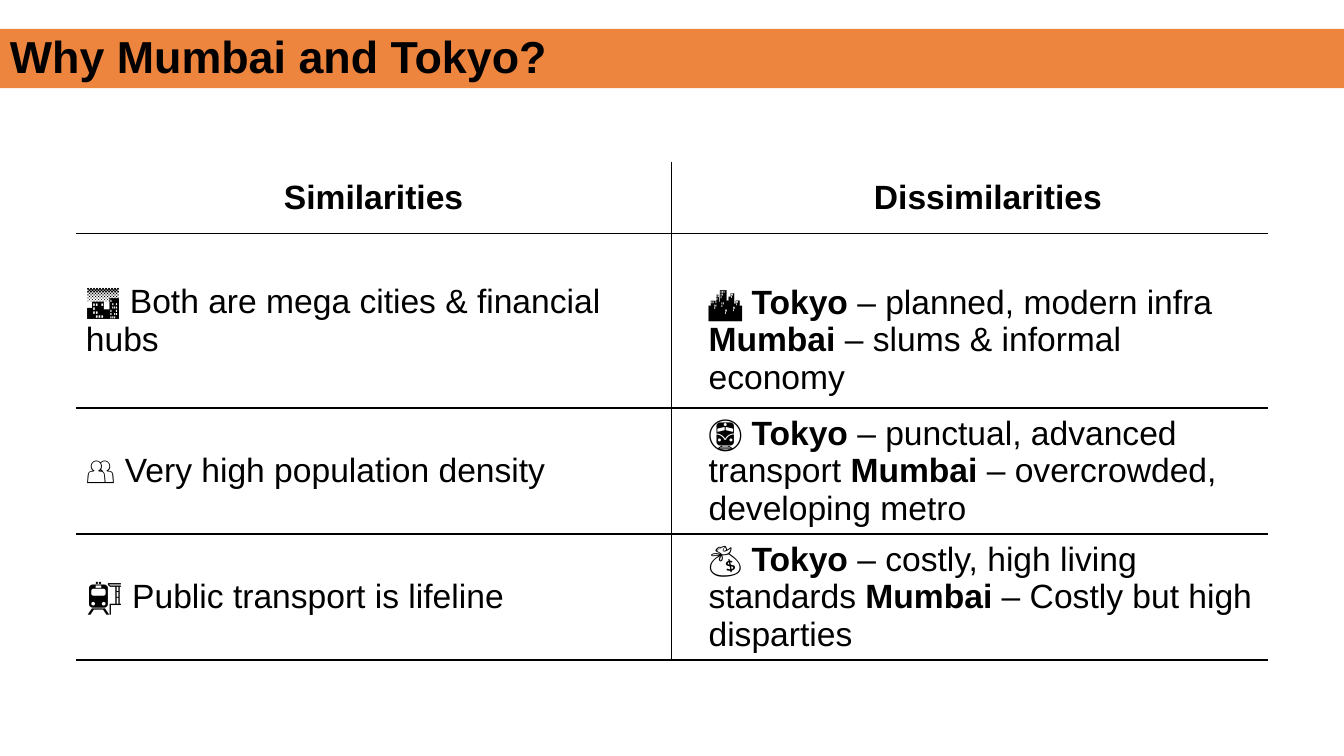
from lxml import etree
from pptx import Presentation
from pptx.dml.color import RGBColor
from pptx.enum.shapes import MSO_SHAPE
from pptx.enum.text import MSO_ANCHOR, PP_ALIGN
from pptx.oxml.ns import qn
from pptx.util import Pt

RECTANGLE = MSO_SHAPE.RECTANGLE
MIDDLE = MSO_ANCHOR.MIDDLE
LEFT, CENTER = PP_ALIGN.LEFT, PP_ALIGN.CENTER

FONT = "Arial"
BLACK, ORANGE = "000000", "EE853E"
COLUMN_WIDTHS = (425.3, 19.5, 406.7)
ROW_HEIGHTS = (51, 125, 90, 90)
LINE_HEIGHT = 27.6

# Each cell is a list of spans; every second span is bold.
HEADINGS = (["", "Similarities"], [" ", "Dissimilarities"])
COMPARISONS = (
    (["🌆 Both are mega cities & financial hubs"],
     ["🏙 ", "Tokyo", " – planned, modern infra ", "Mumbai",
      " – slums & informal economy"]),
    (["👥 Very high population density"],
     ["🚇 ", "Tokyo", " – punctual, advanced transport ", "Mumbai",
      " – overcrowded, developing metro"]),
    (["🚉 Public transport is lifeline"],
     ["💰 ", "Tokyo", " – costly, high living standards ", "Mumbai",
      " – Costly but high disparties"]),
)


def color(value):
    return RGBColor.from_string(value)


def style_font(font, size):
    font.name, font.size = FONT, Pt(size)
    font.color.rgb = color(BLACK)


def add_title_bar(page, left, top, width, height):
    bar = page.shapes.add_shape(RECTANGLE, Pt(left), Pt(top), Pt(width), Pt(height))
    bar.shadow.inherit = False
    bar.fill.solid()
    bar.fill.fore_color.rgb = color(ORANGE)
    bar.line.fill.background()
    bar.text_frame.word_wrap = True
    bar.text_frame.vertical_anchor = MIDDLE
    para = bar.text_frame.paragraphs[0]
    para.text = "Why Mumbai and Tokyo?"
    para.alignment = LEFT
    para.line_spacing = 0.9
    style_font(para.font, 32)
    para.font.bold = True


def set_borders(cell, visible_sides):
    """Draw the named sides (L, R, T, B) in black and hide the others."""
    properties = cell._tc.get_or_add_tcPr()
    for side in "LRTB":
        line = etree.SubElement(properties, qn(f"a:ln{side}"), w=str(Pt(1)))
        if side in visible_sides:
            fill = etree.SubElement(line, qn("a:solidFill"))
            etree.SubElement(fill, qn("a:srgbClr"), val=BLACK)
        else:
            etree.SubElement(line, qn("a:noFill"))


def fill_cell(cell, spans, alignment):
    cell.vertical_anchor = MIDDLE
    para = cell.text_frame.paragraphs[0]
    para.alignment = alignment
    style_font(para.font, 24)
    for index, text in enumerate(spans):
        if text:
            span = para.add_run()
            span.text = text
            style_font(span.font, 24)
            span.font.bold = index % 2 == 1


def add_comparison_table(page, left, top):
    rows = (HEADINGS,) + COMPARISONS
    frame = page.shapes.add_table(
        len(ROW_HEIGHTS), len(COLUMN_WIDTHS), Pt(left), Pt(top),
        Pt(sum(COLUMN_WIDTHS)), Pt(sum(ROW_HEIGHTS)))
    table = frame.table
    table.first_row = table.horz_banding = False
    for column, width in zip(table.columns, COLUMN_WIDTHS):
        column.width = Pt(width)
    for row_index, (height, (similarity, difference)) in enumerate(zip(ROW_HEIGHTS, rows)):
        row = table.rows[row_index]
        row.height = Pt(height)
        alignment = LEFT if row_index else CENTER
        horizontal = "TB" if row_index else "B"
        for cell, divider in zip(row.cells, ("R", "L", "")):
            set_borders(cell, horizontal + divider)
            cell.fill.background()
        fill_cell(row.cells[0], similarity, alignment)
        fill_cell(row.cells[2], difference, alignment)
    # The first difference sits one line lower in its row.
    table.cell(1, 2).margin_top = Pt(3.6 + LINE_HEIGHT)


def main():
    deck = Presentation()
    deck.slide_width, deck.slide_height = Pt(960), Pt(540)
    page = deck.slides.add_slide(deck.slide_layouts[6])
    add_comparison_table(page, 54.2, 115.5)
    add_title_bar(page, 0, 20.7, 960, 42.3)
    deck.save("out.pptx")


if __name__ == "__main__":
    main()
